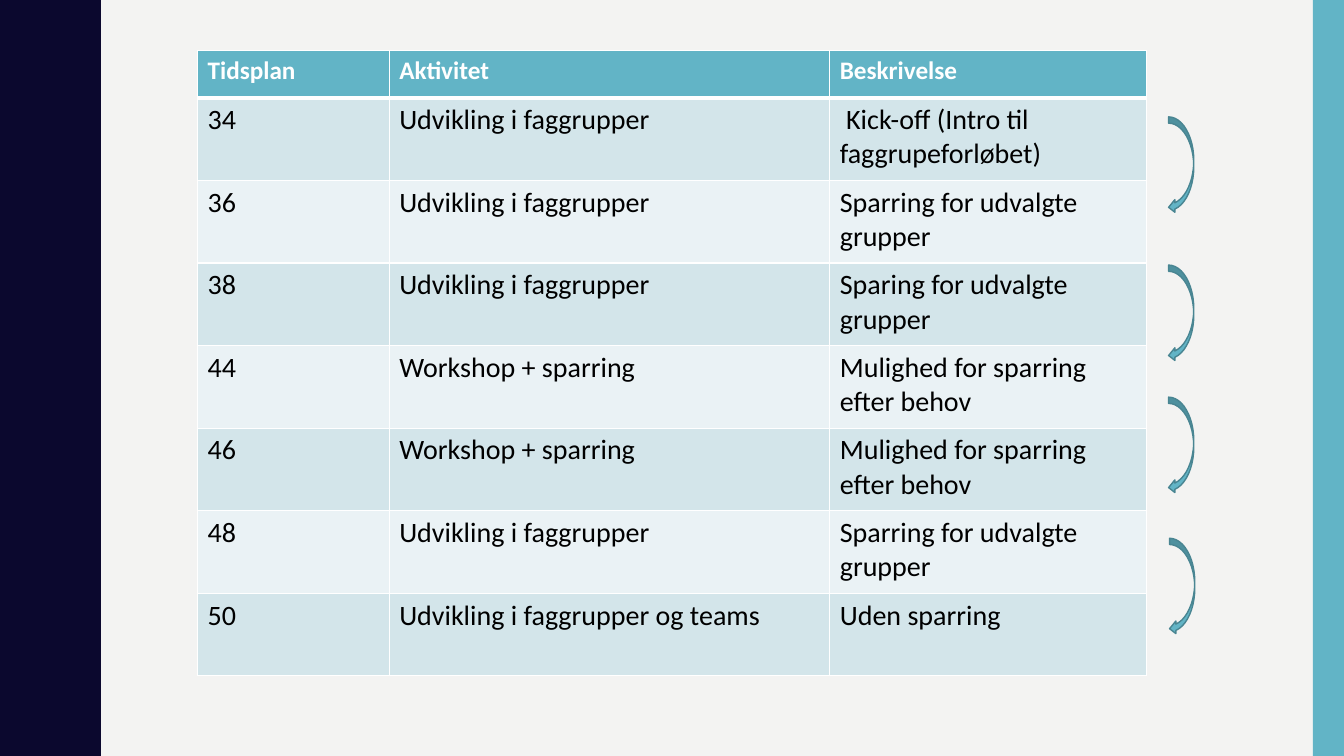
from dataclasses import dataclass

from lxml import etree
from pptx import Presentation
from pptx.dml.color import RGBColor
from pptx.enum.shapes import MSO_SHAPE
from pptx.enum.text import MSO_ANCHOR, PP_ALIGN
from pptx.oxml.ns import qn
from pptx.util import Inches, Pt

RECTANGLE = MSO_SHAPE.RECTANGLE
CURVED_ARROW = MSO_SHAPE.CURVED_LEFT_ARROW
TOP = MSO_ANCHOR.TOP
LEFT = PP_ALIGN.LEFT

COLORS = {
    "background": "F3F3F2",
    "navy": "0B082E",
    "teal": "62B4C6",
    "teal_dark": "498592",
    "band_dark": "D3E5EA",
    "band_light": "EAF2F5",
    "white": "FFFFFF",
    "black": "000000",
}

SLIDE_WIDTH, SLIDE_HEIGHT = 13.33, 7.5

# Half of one wave, as (x, y); the other half mirrors it
WAVE_PERIOD = 1.5
WAVE_COUNT = 5
HALF_WAVE = [
    (0.78, 0), (0.78, 0.07), (0.79, 0.14), (0.8, 0.2), (0.81, 0.25),
    (0.83, 0.29), (0.85, 0.33), (0.87, 0.38), (0.89, 0.42), (0.91, 0.46),
    (0.93, 0.5), (0.95, 0.55), (0.96, 0.61), (0.97, 0.68), (0.97, 0.75),
]

COLUMN_WIDTHS = [1.9, 4.37, 3.14]
ROW_HEIGHTS = [0.47] + [0.82] * 6 + [0.81]
SCHEDULE = [
    ("Tidsplan", "Aktivitet", "Beskrivelse"),
    ("34", "Udvikling i faggrupper", " Kick-off (Intro til faggrupeforløbet)"),
    ("36", "Udvikling i faggrupper", "Sparring for udvalgte grupper"),
    ("38", "Udvikling i faggrupper", "Sparing for udvalgte grupper"),
    ("44", "Workshop + sparring", "Mulighed for sparring efter behov"),
    ("46", "Workshop + sparring", "Mulighed for sparring efter behov"),
    ("48", "Udvikling i faggrupper", "Sparring for udvalgte grupper"),
    ("50", "Udvikling i faggrupper og teams", "Uden sparring"),
]
HEADER_FONT = {"name": "Calibri", "size": Pt(18), "bold": True}
BODY_FONT = {"name": "Calibri", "size": Pt(20), "bold": False}


@dataclass
class Block:
    left: float
    top: float
    width: float
    height: float
    kind: int
    fill: str
    line: str | None = None


SIDE_BAR = Block(13.02, 0, 0.31, SLIDE_HEIGHT, RECTANGLE, "teal")
ARROWS = [
    Block(left, top, 0.25, 0.96, CURVED_ARROW, "teal", "teal_dark")
    for left, top in [(11.59, 1.16), (11.59, 2.63), (11.59, 3.94), (11.6, 5.34)]
]


def color(name: str) -> RGBColor:
    return RGBColor.from_string(COLORS[name])


def paint(shape, fill: str, line: str | None = None) -> None:
    shape.shadow.inherit = False
    shape.fill.solid()
    shape.fill.fore_color.rgb = color(fill)
    if line:
        shape.line.color.rgb = color(line)
        shape.line.width = Pt(1)
    else:
        shape.line.fill.background()


def draw_block(slide, block: Block) -> None:
    shape = slide.shapes.add_shape(
        block.kind, Inches(block.left), Inches(block.top),
        Inches(block.width), Inches(block.height),
    )
    paint(shape, block.fill, block.line)


def draw_wave(slide) -> None:
    mirrored = [(x, WAVE_PERIOD - y) for x, y in reversed(HALF_WAVE[1:-1])]
    edge = [
        (x, y + index * WAVE_PERIOD)
        for index in range(WAVE_COUNT)
        for x, y in HALF_WAVE + mirrored
    ]
    edge += [(HALF_WAVE[0][0], SLIDE_HEIGHT), (0, SLIDE_HEIGHT)]
    builder = slide.shapes.build_freeform(0, 0, scale=Inches(1))
    builder.add_line_segments(edge, close=True)
    paint(builder.convert_to_shape(), "navy")


def set_border(cell, side: str, points: float) -> None:
    properties = cell._tc.get_or_add_tcPr()
    line = etree.SubElement(properties, qn(f"a:ln{side}"), w=str(Pt(points)))
    fill = etree.SubElement(line, qn("a:solidFill"))
    etree.SubElement(fill, qn("a:srgbClr"), val=COLORS["white"])


def fill_cell(cell, text: str, row: int) -> None:
    is_header = row == 0
    widths = {"L": 1, "R": 1, "T": 3 if row == 1 else 1, "B": 3 if is_header else 1}
    for side, points in widths.items():
        set_border(cell, side, points)
    band = "band_dark" if row % 2 else "band_light"
    cell.fill.solid()
    cell.fill.fore_color.rgb = color("teal" if is_header else band)
    cell.vertical_anchor = TOP
    paragraph = cell.text_frame.paragraphs[0]
    paragraph.alignment = LEFT
    run = paragraph.add_run()
    run.text = text
    for attribute, value in (HEADER_FONT if is_header else BODY_FONT).items():
        setattr(run.font, attribute, value)
    run.font.color.rgb = color("white" if is_header else "black")


def draw_schedule(slide) -> None:
    table = slide.shapes.add_table(
        len(SCHEDULE), len(COLUMN_WIDTHS), Inches(1.96), Inches(0.5),
        Inches(sum(COLUMN_WIDTHS)), Inches(sum(ROW_HEIGHTS)),
    ).table
    for column, width in zip(table.columns, COLUMN_WIDTHS):
        column.width = Inches(width)
    for row, height in zip(table.rows, ROW_HEIGHTS):
        row.height = Inches(height)
    for row_index, texts in enumerate(SCHEDULE):
        for column_index, text in enumerate(texts):
            fill_cell(table.cell(row_index, column_index), text, row_index)


def main() -> None:
    presentation = Presentation()
    presentation.slide_width = Inches(SLIDE_WIDTH)
    presentation.slide_height = Inches(SLIDE_HEIGHT)
    slide = presentation.slides.add_slide(presentation.slide_layouts[6])

    # Background and side decoration
    slide.background.fill.solid()
    slide.background.fill.fore_color.rgb = color("background")
    draw_wave(slide)
    draw_block(slide, SIDE_BAR)

    # Schedule and the arrows linking its rows
    draw_schedule(slide)
    for arrow in ARROWS:
        draw_block(slide, arrow)

    presentation.save("out.pptx")


if __name__ == "__main__":
    main()
